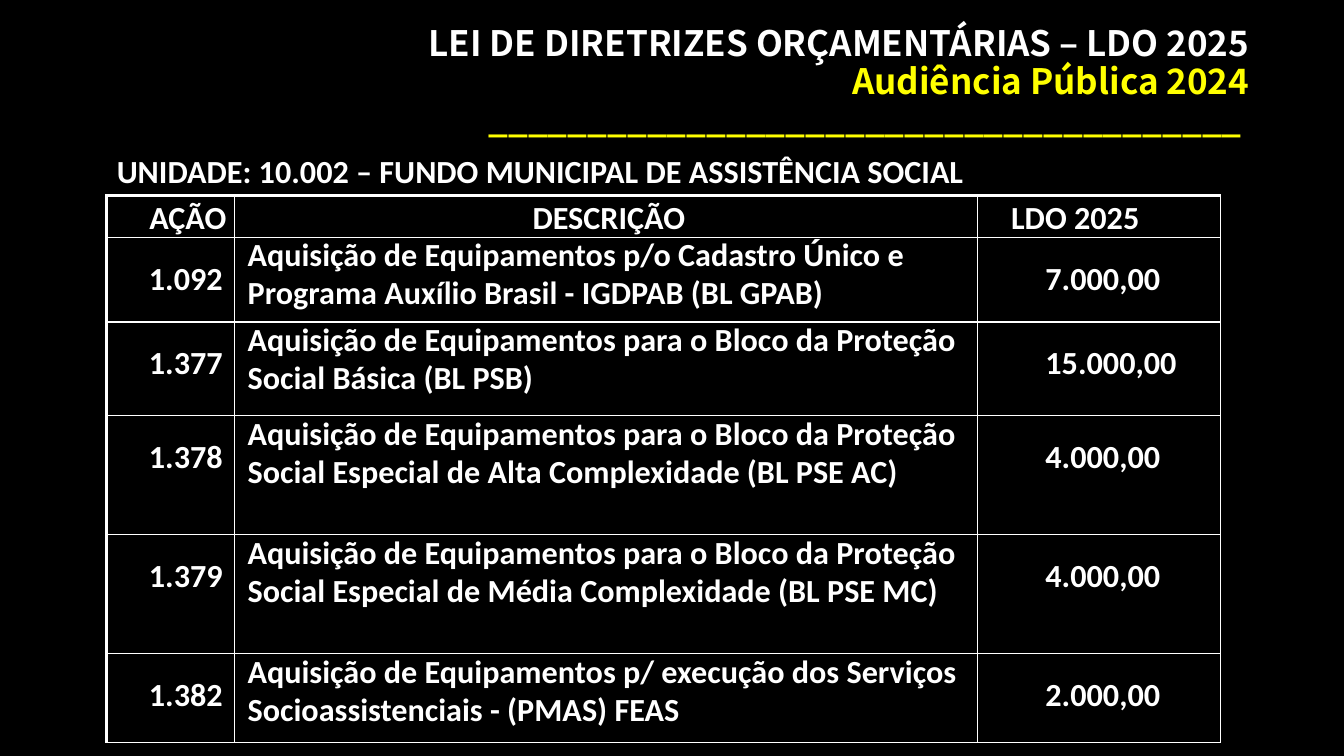
from lxml import etree
from pptx import Presentation
from pptx.dml.color import RGBColor
from pptx.enum.text import MSO_ANCHOR, PP_ALIGN
from pptx.oxml.ns import qn
from pptx.util import Pt

BLACK = RGBColor(0x00, 0x00, 0x00)
WHITE = RGBColor(0xFF, 0xFF, 0xFF)
YELLOW = RGBColor(0xFF, 0xFF, 0x00)
LEFT, CENTER, RIGHT = PP_ALIGN.LEFT, PP_ALIGN.CENTER, PP_ALIGN.RIGHT
TOP = MSO_ANCHOR.TOP

TITLE = [
    ("LEI DE DIRETRIZES ORÇAMENTÁRIAS – LDO 2025", WHITE),
    ("Audiência Pública 2024", YELLOW),
    ("_" * 38, YELLOW),
]
HEADER = ("AÇÃO", "DESCRIÇÃO", "LDO 2025")
ACTIONS = [
    ("1.092", "Aquisição de Equipamentos p/o Cadastro Único e Programa Auxílio Brasil - IGDPAB (BL GPAB)", "7.000,00"),
    ("1.377", "Aquisição de Equipamentos para o Bloco da Proteção Social Básica (BL PSB)", "15.000,00"),
    ("1.378", "Aquisição de Equipamentos para o Bloco da Proteção Social Especial de Alta Complexidade (BL PSE AC)", "4.000,00"),
    ("1.379", "Aquisição de Equipamentos para o Bloco da Proteção Social Especial de Média Complexidade (BL PSE MC)", "4.000,00"),
    ("1.382", "Aquisição de Equipamentos p/ execução dos Serviços Socioassistenciais - (PMAS) FEAS", "2.000,00"),
]
COL_WIDTHS = (91.4, 530.6, 173.5)
ROW_HEIGHTS = (29.3, 60.5, 67, 85, 85, 63.4)
HEADER_STYLE = [(RIGHT, 0, 2.2, 6, None), (CENTER, 4, 2.2, 0, None), (LEFT, 24, 2.2, 0, None)]
ACTION_STYLE = [(RIGHT, 0, 15.8, 8.5, None), (LEFT, 9.2, 0, 0, Pt(27.3)), (LEFT, 48.5, 15.8, 0, None)]


class Deck:
    """Hold the text style and the current slide, and draw its elements."""

    def __init__(self, prs):
        self.slide = prs.slides.add_slide(prs.slide_layouts[6])
        fill = self.slide.background.fill
        fill.solid()
        fill.fore_color.rgb = BLACK

    def paragraph(self, p, text, size=23, color=WHITE, font="Calibri", align=LEFT, spacing=None):
        p.text = text
        p.alignment = align
        if spacing:
            p.line_spacing = spacing
        for r in p.runs:
            r.font.name = font
            r.font.size = Pt(size)
            r.font.bold = True
            r.font.color.rgb = color

    def text(self, x, y, w, h, lines, **style):
        tf = self.slide.shapes.add_textbox(Pt(x), Pt(y), Pt(w), Pt(h)).text_frame
        tf.word_wrap = True
        tf.vertical_anchor = TOP
        for i, (text, color) in enumerate(lines):
            p = tf.paragraphs[0] if i == 0 else tf.add_paragraph()
            self.paragraph(p, text, color=color, **style)
        return tf

    def borders(self, cell, widths):
        tc_pr = cell._tc.get_or_add_tcPr()
        for i, (side, width) in enumerate(widths.items()):
            ln = etree.Element(qn("a:" + side), w=str(Pt(width)))
            fill = etree.SubElement(ln, qn("a:solidFill"))
            etree.SubElement(fill, qn("a:srgbClr"), val=str(WHITE))
            tc_pr.insert(i, ln)

    def cell(self, cell, text, align, left, top, right, spacing):
        cell.margin_left, cell.margin_top = Pt(left), Pt(top)
        cell.margin_right, cell.margin_bottom = Pt(right), Pt(0)
        cell.vertical_anchor = TOP
        cell.fill.solid()
        cell.fill.fore_color.rgb = BLACK
        self.paragraph(cell.text_frame.paragraphs[0], text, align=align, spacing=spacing)

    def table(self, x, y, rows, col_widths, row_heights):
        table = self.slide.shapes.add_table(
            len(rows), len(col_widths), Pt(x), Pt(y), Pt(sum(col_widths)), Pt(sum(row_heights))
        ).table
        for column, width in zip(table.columns, col_widths):
            column.width = Pt(width)
        for i, (row, height) in enumerate(zip(rows, row_heights)):
            table.rows[i].height = Pt(height)
            styles = ACTION_STYLE if i else HEADER_STYLE
            for j, (text, style) in enumerate(zip(row, styles)):
                cell = table.cell(i, j)
                self.cell(cell, text, *style)
                self.borders(cell, {"lnL": 1 if j else 2.25, "lnR": 1, "lnT": 1 if i else 2.25, "lnB": 1})


def main():
    prs = Presentation()
    prs.slide_width, prs.slide_height = Pt(960), Pt(540)
    deck = Deck(prs)
    title = deck.text(71.3, 15.2, 828, 104.4, TITLE, size=25, font="Noto Sans CJK JP", align=RIGHT, spacing=0.9)
    title.paragraphs[2]._p.get_or_add_pPr().set("marR", str(Pt(5.5)))
    deck.text(76.3, 104.4, 805, 35.3, [("UNIDADE: 10.002 – FUNDO MUNICIPAL DE ASSISTÊNCIA SOCIAL", WHITE)])
    deck.table(76.3, 139.7, [HEADER] + ACTIONS, COL_WIDTHS, ROW_HEIGHTS)
    prs.save("out.pptx")


if __name__ == "__main__":
    main()
